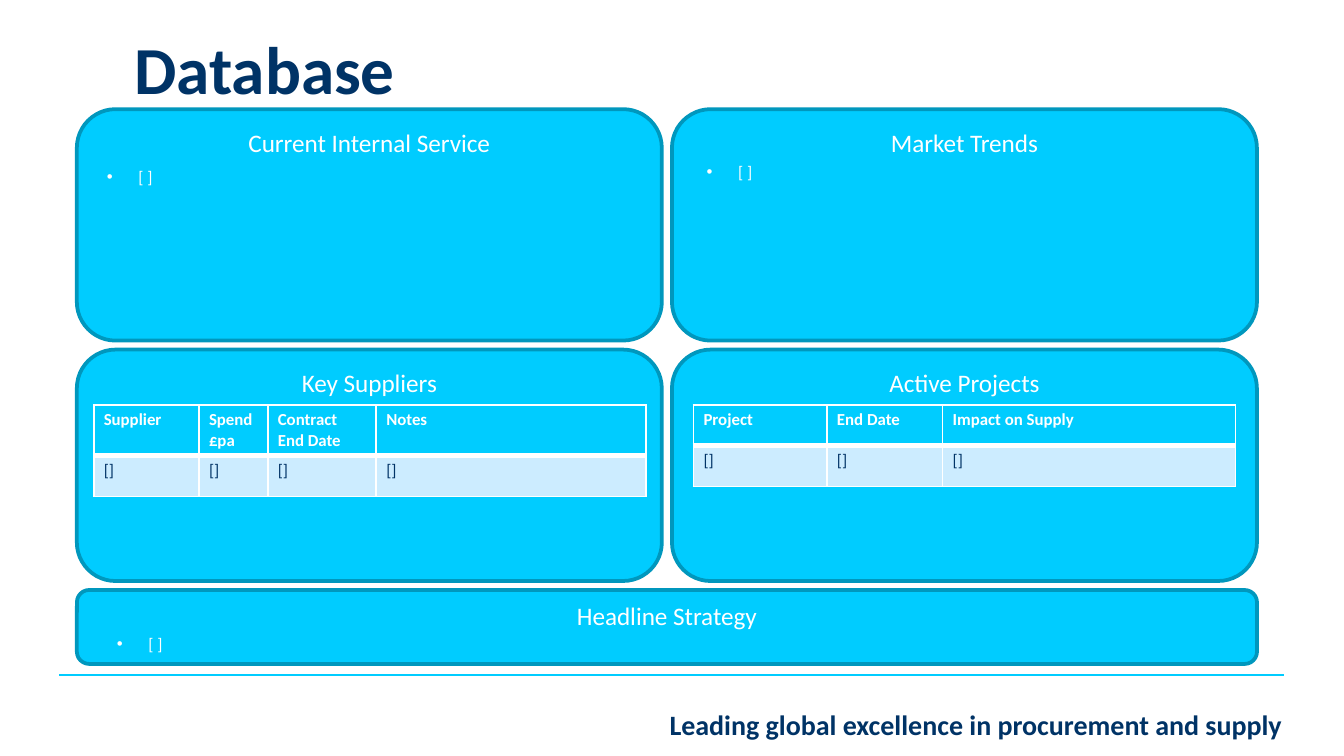
from dataclasses import dataclass

from lxml import etree
from pptx import Presentation
from pptx import util as u
from pptx.dml.color import RGBColor
from pptx.enum import shapes, text
from pptx.oxml import ns


@dataclass(frozen=True)
class Theme:
    font: str = "Calibri"
    navy: str = "003366"
    cyan: str = "00CCFF"
    teal: str = "0097BD"
    pale: str = "CCECFF"
    white: str = "FFFFFF"
    title: float = 36
    footer: float = 15
    heading: float = 13.5
    body: float = 9


def color(value):
    return RGBColor.from_string(value)


def write(frame, content, *, size, ink, font, bold=False, align=text.PP_ALIGN.LEFT,
          bullet=False, leading=None):
    frame.word_wrap = True
    paragraph = frame.paragraphs[0]
    paragraph.alignment = align
    if leading:
        paragraph.line_spacing = u.Pt(leading)
    if bullet:
        properties = paragraph._p.get_or_add_pPr()
        properties.set("marL", str(u.Pt(16.88)))
        properties.set("indent", str(u.Pt(-16.88)))
        etree.SubElement(properties, ns.qn("a:buFont"), typeface="Arial")
        etree.SubElement(properties, ns.qn("a:buChar"), char="•")
    run = paragraph.add_run()
    run.text = content
    run.font.name = font
    run.font.size = u.Pt(size)
    run.font.bold = bold
    run.font.color.rgb = color(ink)


class SlideBuilder:
    def __init__(self, slide, theme):
        self.slide = slide
        self.theme = theme

    def text_box(self, box, content, inset=None, **style):
        shape = self.slide.shapes.add_textbox(*map(u.Pt, box))
        frame = shape.text_frame
        if inset is not None:
            frame.margin_left = frame.margin_right = u.Pt(inset)
            frame.margin_top = frame.margin_bottom = u.Pt(inset)
        write(frame, content, font=self.theme.font, **style)

    def bullet(self, left, top, width):
        self.text_box((left, top, width, 18.2), "[ ]", size=self.theme.body,
                      ink=self.theme.white, bullet=True)

    def panel(self, box, heading):
        shape = self.slide.shapes.add_shape(
            shapes.MSO_SHAPE.ROUNDED_RECTANGLE, *map(u.Pt, box))
        shape.shadow.inherit = False
        shape.fill.solid()
        shape.fill.fore_color.rgb = color(self.theme.cyan)
        shape.line.color.rgb = color(self.theme.teal)
        shape.line.width = u.Pt(2)
        shape.text_frame.vertical_anchor = text.MSO_ANCHOR.TOP
        write(shape.text_frame, heading, size=self.theme.heading, ink=self.theme.white,
              font=self.theme.font, align=text.PP_ALIGN.CENTER)

    def rule(self, left, right, top):
        line = self.slide.shapes.add_connector(
            shapes.MSO_CONNECTOR.STRAIGHT, *map(u.Pt, (left, top, right, top)))
        line.line.color.rgb = color(self.theme.cyan)
        line.line.width = u.Pt(1)
        etree.SubElement(line._element.spPr, ns.qn("a:effectLst"))

    def borders(self, cell, top, bottom):
        properties = cell._tc.get_or_add_tcPr()
        widths = {"lnL": 1, "lnR": 1, "lnT": top, "lnB": bottom}
        for position, (side, width) in enumerate(widths.items()):
            line = etree.Element(ns.qn(f"a:{side}"), w=str(u.Pt(width)))
            fill = etree.SubElement(line, ns.qn("a:solidFill"))
            etree.SubElement(fill, ns.qn("a:srgbClr"), val=self.theme.white)
            properties.insert(position, line)

    def table(self, left, top, headers, widths, heights):
        rows = [headers, ["[]"] * len(headers)]
        frame = self.slide.shapes.add_table(
            len(rows), len(headers),
            *map(u.Pt, (left, top, sum(widths), sum(heights))))
        table = frame.table
        for column, width in zip(table.columns, widths):
            column.width = u.Pt(width)
        for row, height in zip(table.rows, heights):
            row.height = u.Pt(height)
        for row_index, row in enumerate(rows):
            is_header = row_index == 0
            for column_index, content in enumerate(row):
                cell = table.cell(row_index, column_index)
                cell.margin_left = cell.margin_right = u.Pt(5.4)
                cell.margin_top = cell.margin_bottom = u.Pt(2.7)
                cell.fill.solid()
                cell.fill.fore_color.rgb = color(
                    self.theme.cyan if is_header else self.theme.pale)
                self.borders(cell, 1 if is_header else 3, 3 if is_header else 1)
                write(cell.text_frame, content, size=self.theme.body, bold=is_header,
                      ink=self.theme.white if is_header else self.theme.navy,
                      font=self.theme.font)


def main():
    presentation = Presentation()
    presentation.slide_width = u.Pt(720)
    presentation.slide_height = u.Pt(405)
    theme = Theme()
    builder = SlideBuilder(
        presentation.slides.add_slide(presentation.slide_layouts[6]), theme)

    builder.text_box((253.5, 375.8, 440.6, 25.5),
                     "Leading global excellence in procurement and supply",
                     size=theme.footer, ink=theme.navy, bold=True,
                     align=text.PP_ALIGN.RIGHT)
    builder.rule(31.8, 687.6, 361.5)
    builder.text_box((72, 21.6, 670.3 - 72, 78.5), "Database", inset=0,
                     size=theme.title, ink=theme.navy, bold=True, leading=36)

    left, top, width, height = 41.2, 58.5, 313.4, 124
    step_x, step_y = 318.8, 128.8
    headings = [["Current Internal Service", "Market Trends"],
                ["Key Suppliers", "Active Projects"]]
    for row, names in enumerate(headings):
        for column, heading in enumerate(names):
            builder.panel((left + column * step_x, top + row * step_y, width, height),
                          heading)
    builder.panel((left, top + 2 * step_y, step_x + width, 39.6), "Headline Strategy")

    builder.bullet(50.2, 85.8, 285)
    builder.bullet(371.5, 83.1, 285)
    builder.bullet(55.6, 335.8, 606)

    builder.table(50.2, 217, ["Supplier", "Spend £pa", "Contract End Date", "Notes"],
                  [56.4, 36.9, 58.1, 144.7], [27.2, 21.8])
    builder.table(371.5, 217, ["Project", "End Date", "Impact on Supply"],
                  [71.5, 62, 157], [21.8, 21.8])

    presentation.save("out.pptx")


if __name__ == "__main__":
    main()
